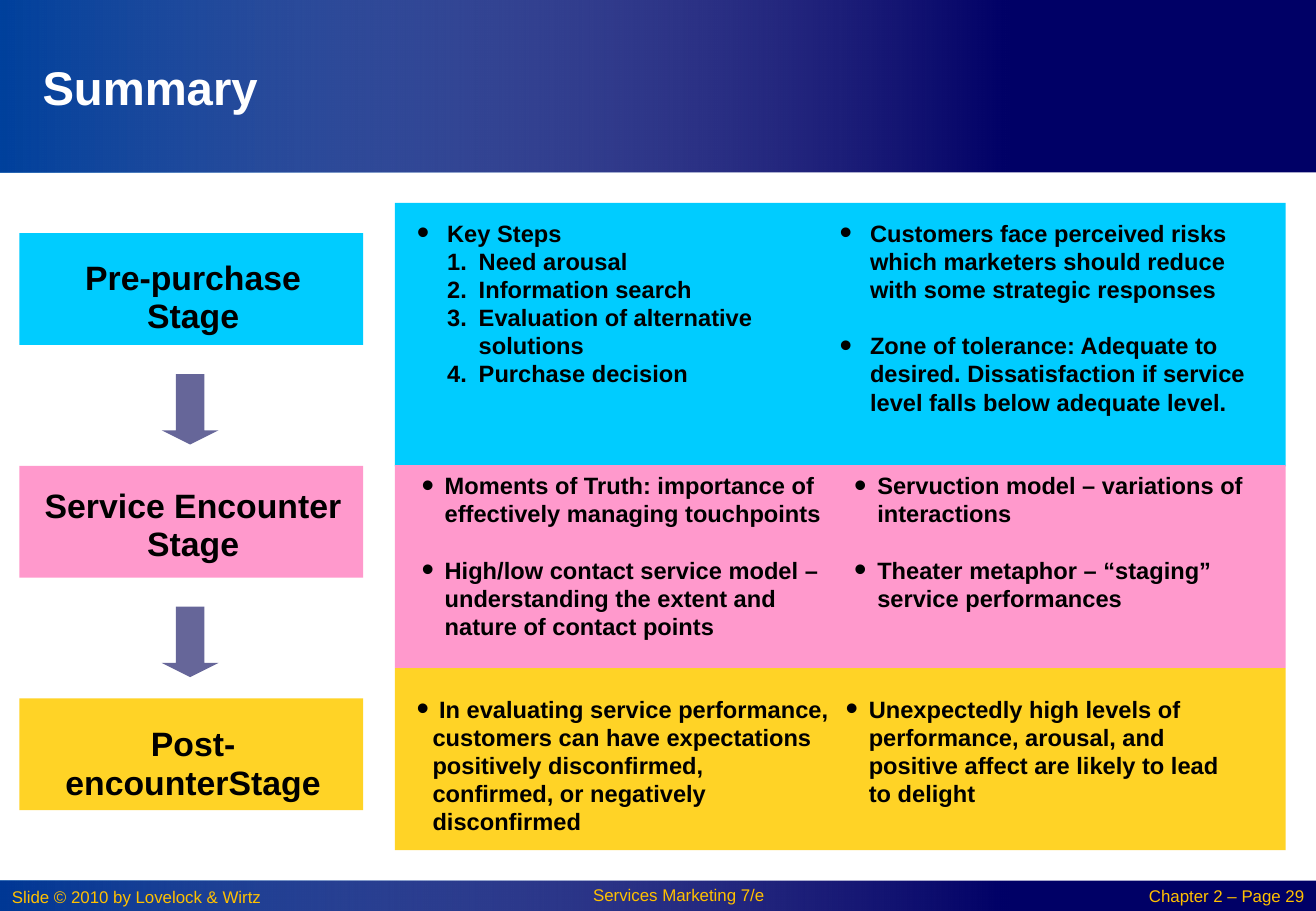
from lxml import etree
from pptx import Presentation
from pptx.dml.color import RGBColor
from pptx.enum import shapes, text
from pptx.oxml.ns import qn
from pptx.util import Inches, Pt

COLORS = {"navy": "000066", "blue": "0152AB", "white": "FFFFFF", "black": "000000",
          "cyan": "00CCFF", "pink": "FF99CC", "yellow": "FFCC00",
          "arrow": "666699", "footer": "FFC000"}
FONT = "Arial"
SLIDE_W, SLIDE_H = 10.83, 7.5
LEFT, CENTER, RIGHT = text.PP_ALIGN.LEFT, text.PP_ALIGN.CENTER, text.PP_ALIGN.RIGHT

TITLE = "Summary"
# top, height, opacity of the blue sweep in percent
BANDS = [(7.25, 0.25, 69), (0, 1.42, 80)]
# text, left, top, width, alignment, line spacing
FOOTERS = [
    ("Slide © 2010 by Lovelock & Wirtz", 0, 7.25, 2.58, LEFT, 1.0),
    ("Services Marketing 7/e", 4.25, 7.25, 2.67, CENTER, 0.9),
    ("Chapter 2 – Page 29", 9.08, 7.26, 1.75, RIGHT, 0.9),
]
# label, space above the label, fill, opacity
STAGES = [
    ("Pre-purchase Stage", 0.21, "cyan", 100),
    ("Service Encounter Stage", 0.17, "pink", 100),
    ("Post-encounterStage", 0.22, "yellow", 85),
]
# panel top, height; text left, top, column width; columns of (hanging indent, bullets, steps)
PANELS = [
    (1.67, 2.17, 3.43, 1.8, 3.48, [
        (0.25, ["Key Steps"], ["Need arousal", "Information search",
                               "Evaluation of alternative solutions", "Purchase decision"]),
        (0.25, ["Customers face perceived risks which marketers should reduce "
                "with some strategic responses",
                "Zone of tolerance: Adequate to desired. Dissatisfaction if service "
                "level falls below adequate level."], []),
    ]),
    (3.83, 1.67, 3.35, 3.88, 3.56, [
        (0.31, ["Moments of Truth: importance of effectively managing touchpoints",
                "High/low contact service model – understanding the extent and "
                "nature of contact points"], []),
        (0.31, ["Servuction model – variations of interactions",
                "Theater metaphor – “staging” service performances"], []),
    ]),
    (5.5, 1.5, 3.43, 5.72, 3.4, [
        (0.13, [" In evaluating service performance, customers can have expectations "
                "positively disconfirmed, confirmed, or negatively disconfirmed"], []),
        (0.32, ["Unexpectedly high levels of performance, arousal, and positive affect "
                "are likely to lead to delight"], []),
    ]),
]
STAGE_X, STAGE_Y, STAGE_W, STAGE_H, STAGE_STEP = 0.16, 1.92, 2.83, 0.92, 1.915
ARROW_X, ARROW_Y, ARROW_W, ARROW_H = 1.33, 3.08, 0.47, 0.58
PANEL_X, PANEL_W = 3.25, 7.33
BODY_LINE, STAGE_LINE = Pt(16.7), Pt(22.8)
BULLET_HANG = 0.19
STEP_INDENT, STEP_HANG = 0.51, 0.26


def rgb(name):
    return RGBColor.from_string(COLORS[name])


def set_alpha(color_parent, percent):
    color = color_parent.find(".//" + qn("a:srgbClr"))
    etree.SubElement(color, qn("a:alpha")).set("val", str(percent * 1000))


def add_block(s, kind, x, y, w, h, color, opacity=100):
    sp = s.shapes.add_shape(kind, Inches(x), Inches(y), Inches(w), Inches(h))
    sp.shadow.inherit = False
    sp.line.fill.background()
    sp.fill.solid()
    sp.fill.fore_color.rgb = rgb(color)
    if opacity < 100:
        set_alpha(sp._element.spPr.find(qn("a:solidFill")), opacity)
    return sp


def add_text_box(s, x, y, w, h, inset=True):
    tf = s.shapes.add_textbox(Inches(x), Inches(y), Inches(w), Inches(h)).text_frame
    tf.word_wrap = True
    if not inset:
        tf.margin_left = tf.margin_right = tf.margin_top = tf.margin_bottom = 0
    return tf


def style(p, size, color, bold=False, align=LEFT, spacing=1.0):
    p.alignment = align
    p.line_spacing = spacing
    for r in p.runs:
        r.font.name, r.font.size, r.font.bold = FONT, Pt(size), bold
        r.font.color.rgb = rgb(color)


def add_marker(p, indent, hang, numbered=False):
    """Give a paragraph a hanging bullet or number."""
    pPr = p._p.get_or_add_pPr()
    pPr.set("marL", str(Inches(indent)))
    pPr.set("indent", str(-Inches(hang)))
    if numbered:
        etree.SubElement(pPr, qn("a:buFont")).set("typeface", FONT)
        etree.SubElement(pPr, qn("a:buAutoNum")).set("type", "arabicPeriod")
    else:
        etree.SubElement(pPr, qn("a:buSzPct")).set("val", "150000")
        etree.SubElement(pPr, qn("a:buFont")).set("typeface", FONT)
        etree.SubElement(pPr, qn("a:buChar")).set("char", "•")


def add_band(s, top, height, opacity):
    rect = shapes.MSO_SHAPE.RECTANGLE
    add_block(s, rect, 0, top, SLIDE_W, height, "navy")
    sweep = add_block(s, rect, 0, top, 8.33, height, "blue")
    sweep.fill.gradient()
    sweep.fill.gradient_angle = 0
    stops = sweep._element.spPr.findall(".//" + qn("a:gs"))
    ends = [("blue", opacity), ("white", 0)]
    for stop, gs, (color, alpha) in zip(sweep.fill.gradient_stops, stops, ends):
        stop.color.rgb = rgb(color)
        set_alpha(gs, alpha)


def add_column(s, x, y, w, h, indent, bullets, steps):
    tf = add_text_box(s, x, y, w, h, inset=False)
    items = [(b, False) for b in bullets] + [(t, True) for t in steps]
    for i, (words, numbered) in enumerate(items):
        p = tf.add_paragraph() if i else tf.paragraphs[0]
        p.text = words
        style(p, 14, "black", True, spacing=BODY_LINE)
        if i and not numbered:
            p.space_before = BODY_LINE
        if numbered:
            add_marker(p, STEP_INDENT, STEP_HANG, True)
        else:
            add_marker(p, indent, indent if indent < 0.3 else BULLET_HANG)


def main():
    prs = Presentation()
    prs.slide_width, prs.slide_height = Inches(SLIDE_W), Inches(SLIDE_H)
    s = prs.slides.add_slide(prs.slide_layouts[5])
    rect, arrow = shapes.MSO_SHAPE.RECTANGLE, shapes.MSO_SHAPE.DOWN_ARROW

    for band in BANDS:
        add_band(s, *band)
    for words, x, y, w, align, spacing in FOOTERS:
        p = add_text_box(s, x, y, w, 0.25).paragraphs[0]
        p.text = words
        style(p, 10, "footer", align=align, spacing=spacing)

    title = s.shapes.title
    s.shapes._spTree.append(title._element)  # bring in front of the header band
    title.left, title.top = Inches(0.25), Inches(0.25)
    title.width, title.height = Inches(7), Inches(0.92)
    title.text_frame.text = TITLE
    title.text_frame.vertical_anchor = text.MSO_ANCHOR.MIDDLE
    style(title.text_frame.paragraphs[0], 28, "white", True)

    for i, (label, gap, color, opacity) in enumerate(STAGES):
        drop = i * STAGE_STEP
        sp = add_block(s, rect, STAGE_X, STAGE_Y + drop, STAGE_W, STAGE_H, color, opacity)
        tf = sp.text_frame
        tf.text = label
        tf.word_wrap = True
        tf.vertical_anchor = text.MSO_ANCHOR.TOP
        tf.margin_top, tf.margin_bottom = Inches(gap), 0
        tf.margin_left, tf.margin_right = Inches(0.19), Inches(0.16)
        style(tf.paragraphs[0], 20, "black", True, CENTER, STAGE_LINE)
        if i < len(STAGES) - 1:
            sp = add_block(s, arrow, ARROW_X, ARROW_Y + drop, ARROW_W, ARROW_H, "arrow")
            sp.adjustments[0], sp.adjustments[1] = 0.5, 0.25

    for (_, _, color, opacity), panel in zip(STAGES, PANELS):
        top, height, x, y, col_w, columns = panel
        add_block(s, rect, PANEL_X, top, PANEL_W, height, color, opacity)
        for i, column in enumerate(columns):
            add_column(s, x + i * col_w, y, col_w, top + height - y, *column)

    prs.save("out.pptx")


if __name__ == "__main__":
    main()
